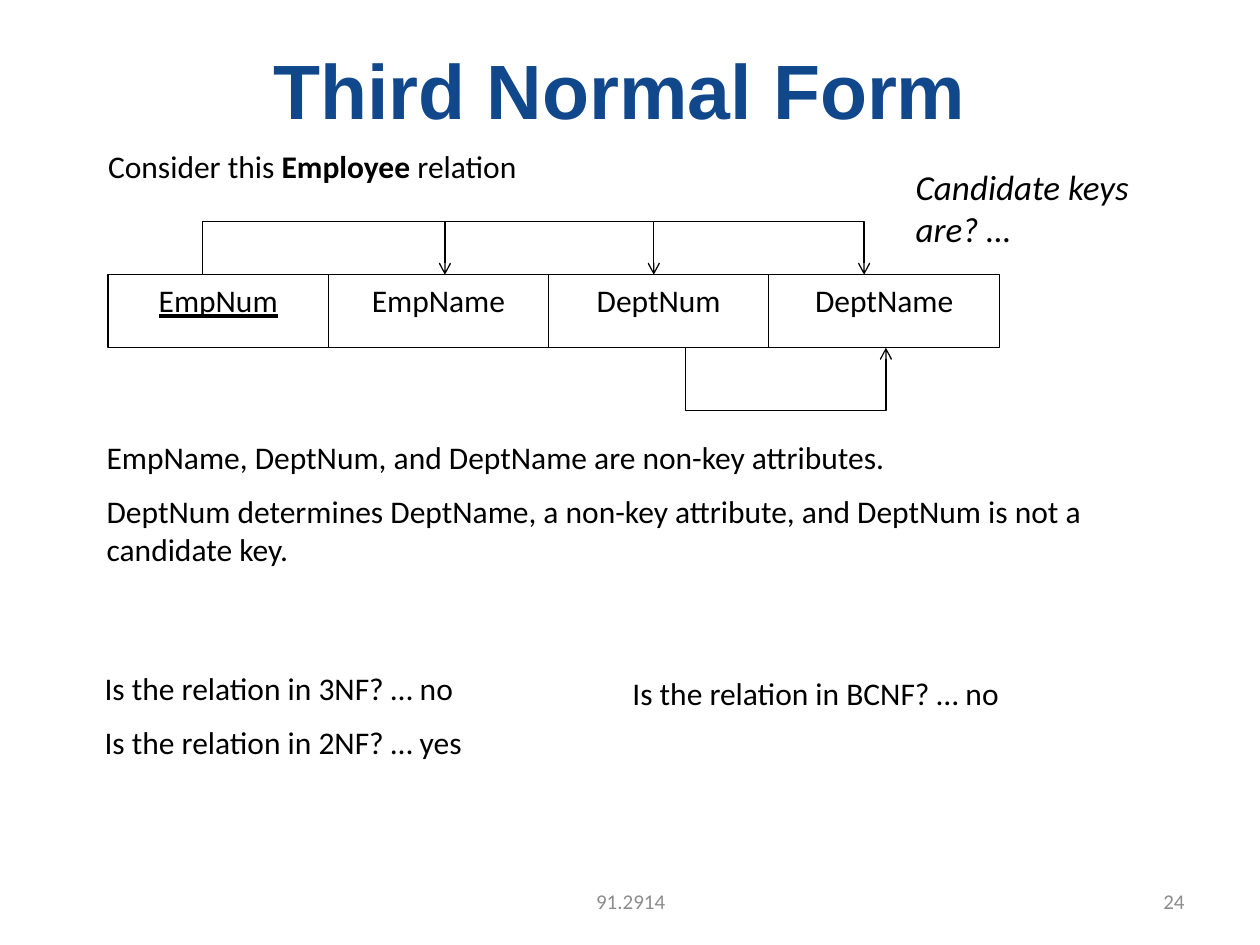
from lxml import etree
from pptx import Presentation
from pptx.dml.color import RGBColor
from pptx.enum.shapes import MSO_SHAPE
from pptx.enum.text import MSO_ANCHOR, PP_ALIGN
from pptx.oxml.ns import qn
from pptx.util import Cm, Pt

RECT = MSO_SHAPE.RECTANGLE
TOP, MIDDLE = MSO_ANCHOR.TOP, MSO_ANCHOR.MIDDLE
LEFT, CENTER, RIGHT = PP_ALIGN.LEFT, PP_ALIGN.CENTER, PP_ALIGN.RIGHT
BLACK = RGBColor(0, 0, 0)
WHITE = RGBColor(255, 255, 255)
BLUE = RGBColor(0x11, 0x47, 0x8B)
GRAY = RGBColor(0x8C, 0x8C, 0x8C)

BODY = {"name": "Calibri", "size": Pt(18)}
HEAD = {"name": "Arial", "size": Pt(44), "bold": True}
FOOT = {"name": "Calibri", "size": Pt(12)}
NOTE = {"name": "Calibri", "size": Pt(20), "italic": True}
KEY = {"underline": True}
BOLD = {"bold": True}

# Content: a paragraph is a list of (words, extra format) runs
TITLE = [[("Third Normal Form", {})]]
FIELDS = [("EmpNum", KEY, 4.44), ("EmpName", {}, 4.44),
          ("DeptNum", {}, 4.44), ("DeptName", {}, 4.65)]
NOTES = [
    # left, top, width, height in cm, left inset, base format, paragraphs
    (1.9, 8.71, 22.02, 3.81, 0.25, BODY,
     [[("EmpName, DeptNum, and DeptName are non-key attributes.", {})],
      [("DeptNum determines DeptName, a non-key attribute, "
        "and DeptNum is not a candidate key.", {})]]),
    (1.93, 2.84, 12.7, 1.27, 0.25, BODY,
     [[("Consider this", {}), (" Employee ", BOLD), ("relation", {})]]),
    (2.11, 13.36, 11, 2.79, 0, BODY,
     [[("Is the relation in 3NF? … no", {})],
      [("Is the relation in 2NF? … yes", {})]]),
    (12.5, 13.46, 10.95, 1.27, 0.25, BODY,
     [[("Is the relation in BCNF? … no", {})]]),
    (18.21, 3.2, 5.28, 1.96, 0.25, NOTE,
     [[("Candidate keys are? …", {})]]),
]
FEET = [(8.69, 8.05, CENTER, "91.2914"), (18.21, 5.92, RIGHT, "24")]

# Table row and the dependency arrows around it, in cm
ROW_X, ROW_Y, ROW_H = 2.18, 5.54, 1.47
BASE = ROW_Y + ROW_H
RAIL, LOOP = 4.47, 8.28
START, ENDS = 4.09, [8.97, 13.18, 17.42]
FROM, TO = 13.82, 17.86


def write(shape, paras, base, color=BLACK, align=LEFT, anchor=TOP, inset=0.25):
    frame = shape.text_frame
    look = {"word_wrap": True, "vertical_anchor": anchor,
            "margin_left": Cm(inset), "margin_right": Cm(0.25),
            "margin_top": Cm(0.13), "margin_bottom": Cm(0.13)}
    for key, value in look.items():
        setattr(frame, key, value)
    for i, runs in enumerate(paras):
        para = frame.add_paragraph() if i else frame.paragraphs[0]
        para.alignment = align
        if i:
            para.space_before = Pt(9)
        for words, extra in runs:
            run = para.add_run()
            run.text = words
            for key, value in {**base, **extra}.items():
                setattr(run.font, key, value)
            run.font.color.rgb = color


def edge(shape):
    shape.shadow.inherit = False
    shape.line.color.rgb = BLACK
    shape.line.width = Pt(0.75)


def arrow(shapes, points):
    """Draw an open bent line with an arrowhead at its last point."""
    spots = [(Cm(x), Cm(y)) for x, y in points]
    pen = shapes.build_freeform(*spots[0])
    pen.add_line_segments(spots[1:], close=False)
    bend = pen.convert_to_shape()
    bend.fill.background()
    edge(bend)
    line = bend.line.fill._xPr
    etree.SubElement(line, qn("a:tailEnd"), type="arrow")


def main():
    deck = Presentation()
    deck.slide_width, deck.slide_height = Cm(25.4), Cm(19.05)
    slide = deck.slides.add_slide(deck.slide_layouts[5])
    shapes = slide.shapes

    title = shapes.title
    spot = {"left": 1.07, "top": 0.2, "width": 22.86, "height": 3.18}
    for key, value in spot.items():
        setattr(title, key, Cm(value))
    write(title, TITLE, HEAD, BLUE, CENTER, MIDDLE)

    for x, wide, align, words in FEET:
        box = shapes.add_textbox(Cm(x), Cm(17.65), Cm(wide), Cm(1.02))
        write(box, [[(words, {})]], FOOT, GRAY, align, MIDDLE)

    x = ROW_X
    for words, extra, wide in FIELDS:
        cell = shapes.add_shape(RECT, Cm(x), Cm(ROW_Y), Cm(wide), Cm(ROW_H))
        cell.fill.solid()
        cell.fill.fore_color.rgb = WHITE
        edge(cell)
        write(cell, [[(words, extra)]], BODY, align=CENTER)
        x += wide

    arrow(shapes, [(START, ROW_Y), (START, RAIL),
                   (ENDS[0], RAIL), (ENDS[0], ROW_Y)])
    for last, end in zip(ENDS, ENDS[1:]):
        arrow(shapes, [(last, RAIL), (end, RAIL), (end, ROW_Y)])
    arrow(shapes, [(FROM, BASE), (FROM, LOOP), (TO, LOOP), (TO, BASE)])

    for x, y, wide, high, inset, base, paras in NOTES:
        box = shapes.add_textbox(Cm(x), Cm(y), Cm(wide), Cm(high))
        write(box, paras, base, inset=inset)

    deck.save("out.pptx")


if __name__ == "__main__":
    main()
